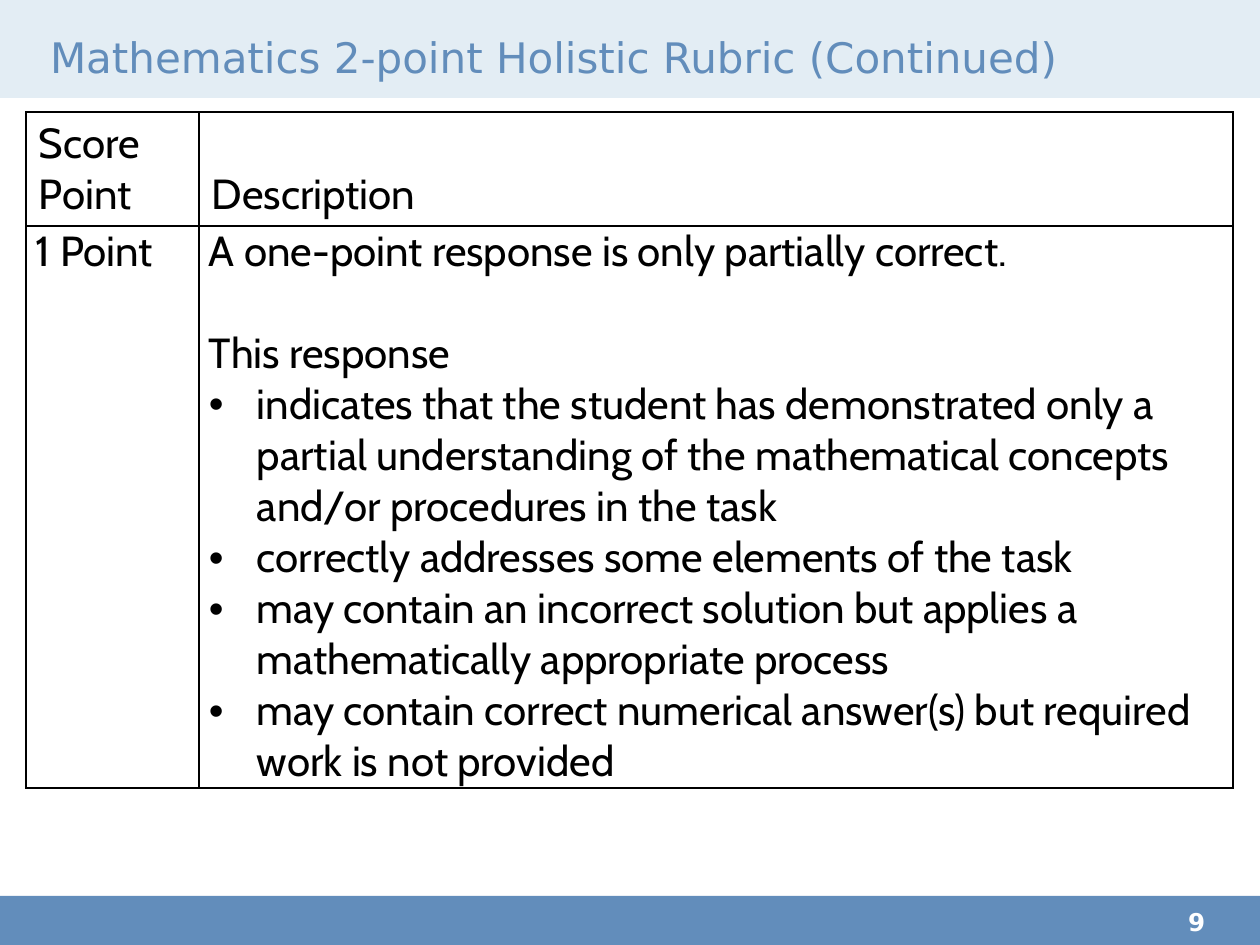
from dataclasses import dataclass

from lxml.etree import SubElement
from pptx import Presentation
from pptx.dml.color import RGBColor as Color
from pptx.enum.shapes import MSO_SHAPE as Shape
from pptx.enum.text import MSO_ANCHOR as Anchor, MSO_AUTO_SIZE as AutoSize, PP_ALIGN as Align
from pptx.oxml.ns import qn
from pptx.util import Pt


@dataclass(frozen=True)
class Theme:
    blue: str = "628DBB"
    pale: str = "E3EDF4"
    white: str = "FFFFFF"
    black: str = "000000"
    heading_font: str = "DejaVu Sans"
    table_font: str = "Cabin"
    text_size: int = 24
    number_size: int = 14
    line_gap: int = 29


THEME = Theme()
WIDTH, HEIGHT = 1260, 945
COLUMNS = (173, 1034)
ROWS = (114, 562)
HEADINGS = ("Score Point", "Description")
BULLETS = (
    "indicates that the student has demonstrated only a partial understanding "
    "of the mathematical concepts and/or procedures in the task",
    "correctly addresses some elements of the task",
    "may contain an incorrect solution but applies a mathematically appropriate process",
    "may contain correct numerical answer(s) but required work is not provided",
)


def px(length):
    return round(length * 914400 / 126)


def place(shape, left, top, width, height):
    shape.left, shape.top = px(left), px(top)
    shape.width, shape.height = px(width), px(height)


def write(para, text, font=THEME.table_font, size=THEME.text_size,
          color=THEME.black, bold=False, after=0):
    para.alignment = Align.LEFT
    para.space_before, para.space_after = Pt(0), Pt(after)
    span = para.add_run()
    span.text = text
    span.font.name, span.font.size, span.font.bold = font, Pt(size), bold
    span.font.color.rgb = Color.from_string(color)


def set_insets(holder, left, top, right, bottom):
    holder.margin_left, holder.margin_top = px(left), px(top)
    holder.margin_right, holder.margin_bottom = px(right), px(bottom)


def add_bullet(para, indent=48):
    properties = para._p.get_or_add_pPr()
    properties.set("marL", str(px(indent)))
    properties.set("indent", str(-px(indent)))
    SubElement(properties, qn("a:buFont"), typeface="Arial")
    SubElement(properties, qn("a:buChar"), char="•")


def add_band(page, top, height, color):
    band = page.shapes.add_shape(Shape.RECTANGLE, 0, px(top), px(WIDTH), px(height))
    band.shadow.inherit = False
    band.fill.solid()
    band.fill.fore_color.rgb = Color.from_string(color)
    band.line.fill.background()


def add_title(page, text):
    title = page.shapes.title
    page.shapes.element.append(title.element)
    place(title, 50, 29, 1134, 62)
    frame = title.text_frame
    frame.auto_size = AutoSize.NONE
    frame.vertical_anchor = Anchor.MIDDLE
    set_insets(frame, 0, 0, 13, 6)
    write(frame.paragraphs[0], text, font=THEME.heading_font, color=THEME.blue)


def add_page_number(page, text):
    box = page.shapes.add_textbox(px(1188), px(907), px(72), px(38))
    frame = box.text_frame
    frame.word_wrap = True
    set_insets(frame, 0, 0, 0, 0)
    write(frame.paragraphs[0], text, font=THEME.heading_font,
          size=THEME.number_size, color=THEME.white, bold=True)


def format_cell(cell, anchor, insets):
    cell.vertical_anchor = anchor
    set_insets(cell, *insets)
    properties = cell._tc.get_or_add_tcPr()
    for side in ("L", "R", "T", "B"):
        border = SubElement(properties, qn(f"a:ln{side}"), w=str(Pt(1)))
        fill = SubElement(border, qn("a:solidFill"))
        SubElement(fill, qn("a:srgbClr"), val=THEME.black)
    cell.fill.background()


def write_description(frame):
    write(frame.paragraphs[0], "A one-point response is only partially correct.",
          after=THEME.line_gap)
    write(frame.add_paragraph(), "This response")
    for text in BULLETS:
        para = frame.add_paragraph()
        write(para, text)
        add_bullet(para)


def add_rubric(page):
    table = page.shapes.add_table(len(ROWS), len(COLUMNS), px(26), px(112),
                                  px(sum(COLUMNS)), px(sum(ROWS))).table
    table.first_row = table.horz_banding = False
    for column, width in zip(table.columns, COLUMNS):
        column.width = px(width)
    for row, height in zip(table.rows, ROWS):
        row.height = px(height)
    for index, heading in enumerate(HEADINGS):
        format_cell(table.cell(0, index), Anchor.BOTTOM, (13, 6, 13, 6))
        format_cell(table.cell(1, index), Anchor.TOP, (10, 0, 10, 0))
        write(table.cell(0, index).text_frame.paragraphs[0], heading)
    write(table.cell(1, 0).text_frame.paragraphs[0], "1 Point")
    write_description(table.cell(1, 1).text_frame)


def main():
    deck = Presentation()
    deck.slide_width, deck.slide_height = px(WIDTH), px(HEIGHT)
    page = deck.slides.add_slide(deck.slide_layouts.get_by_name("Title Only"))
    add_band(page, 896, 49, THEME.blue)
    add_band(page, 0, 98, THEME.pale)
    add_title(page, "Mathematics 2-point Holistic Rubric (Continued)")
    add_rubric(page)
    add_page_number(page, "9")
    deck.save("out.pptx")


if __name__ == "__main__":
    main()
